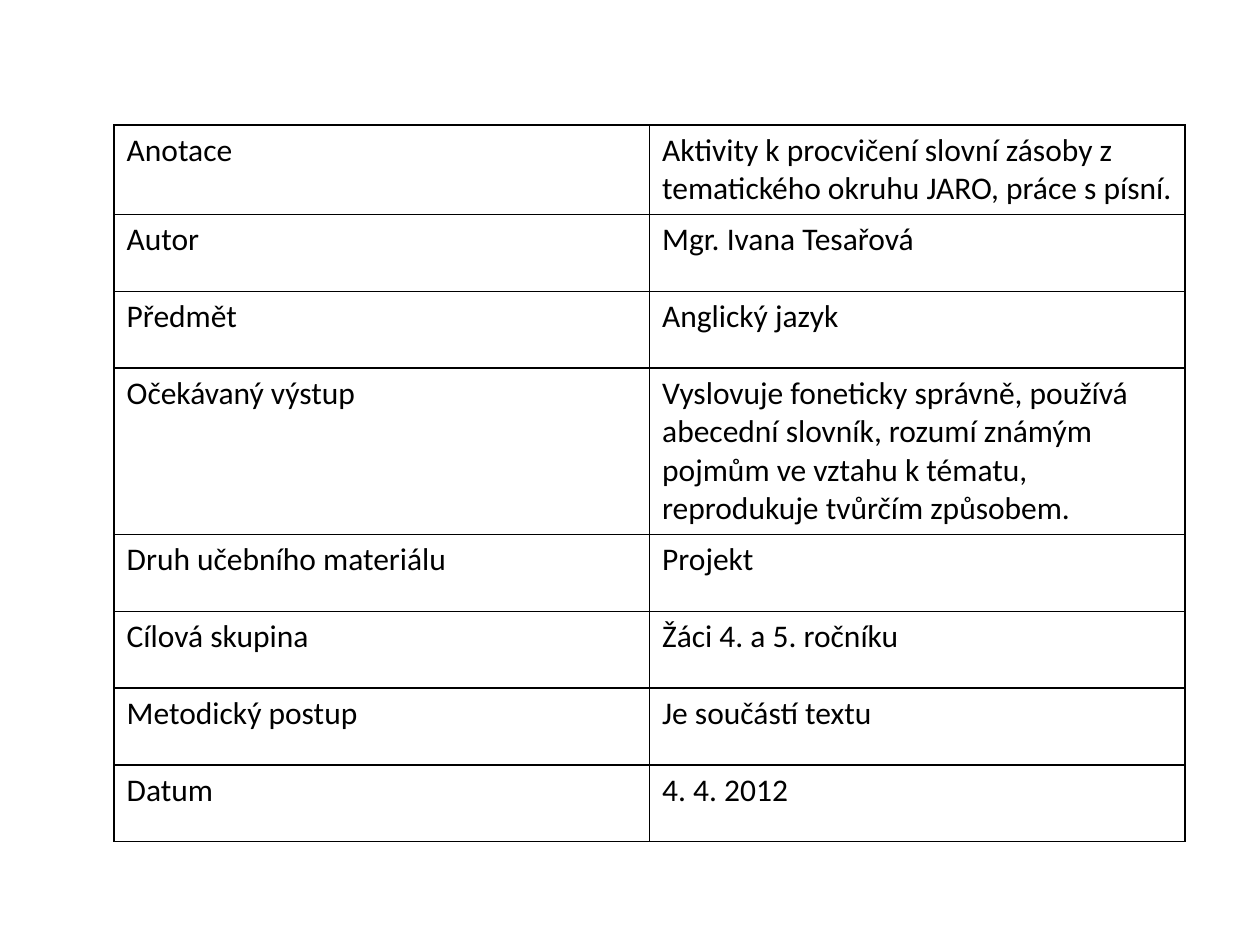
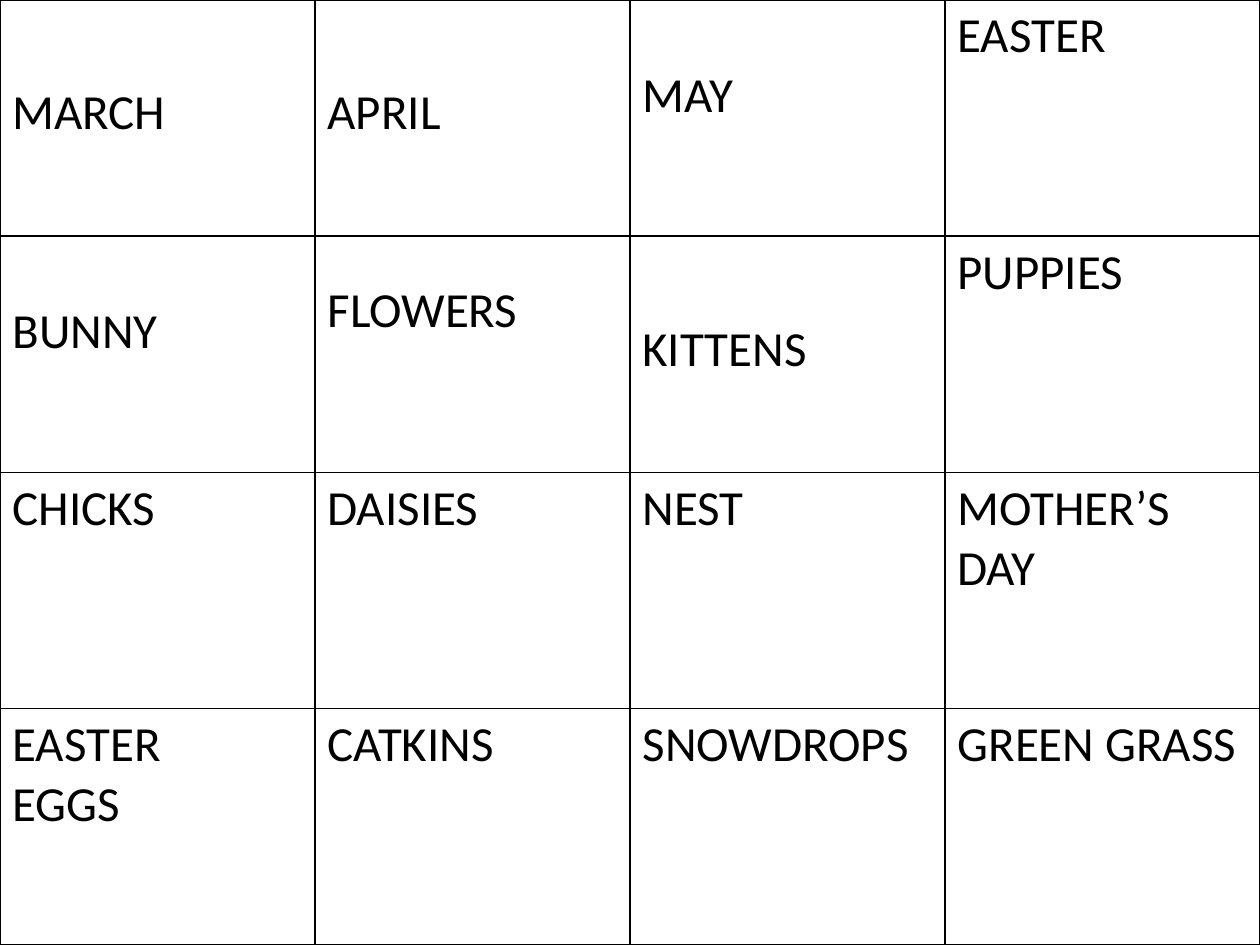
import lxml.etree
import pptx
import pptx.dml.color
import pptx.oxml.ns
import pptx.util

Pt = pptx.util.Pt
FONT = "Calibri"
COLORS = {"text": "000000", "border": "000000", "paper": "FFFFFF"}
BLANK_LAYOUT = 6
CELL_MARGIN = 3.6

LESSON_FACTS = [
    ("Anotace", "Aktivity k procvičení slovní zásoby z tematického okruhu JARO, práce s písní."),
    ("Autor", "Mgr. Ivana Tesařová"),
    ("Předmět", "Anglický jazyk"),
    ("Očekávaný výstup", "Vyslovuje foneticky správně, používá abecední slovník, rozumí známým "
                         "pojmům ve vztahu k tématu, reprodukuje tvůrčím způsobem."),
    ("Druh učebního materiálu", "Projekt"),
    ("Cílová skupina", "Žáci 4. a 5. ročníku"),
    ("Metodický postup", "Je součástí textu"),
    ("Datum", "4. 4. 2012"),
]
FACT_HEIGHTS = [51.1, 43.9, 43.9, 95, 43.9, 43.9, 43.9, 43.9]

SPRING_WORDS = [
    ("MARCH", "APRIL", "MAY", "EASTER"),
    ("BUNNY", "FLOWERS", "KITTENS", "PUPPIES"),
    ("CHICKS", "DAISIES", "NEST", "MOTHER’S\nDAY"),
    ("EASTER\nEGGS", "CATKINS", "SNOWDROPS", "GREEN GRASS"),
]
# Extra space above the words that sit lower in their cards
WORD_DROPS = {"MARCH": 44, "APRIL": 44, "MAY": 34.2, "BUNNY": 34.2, "FLOWERS": 22, "KITTENS": 44}


def rgb(name):
    return pptx.dml.color.RGBColor.from_string(COLORS[name])


def add_borders(cell, width=1):
    """Draw all four sides; the lines must precede the fill in the cell XML."""
    properties = cell._tc.get_or_add_tcPr()
    for index, side in enumerate(("lnL", "lnR", "lnT", "lnB")):
        line = lxml.etree.Element(pptx.oxml.ns.qn(f"a:{side}"), w=str(Pt(width)))
        fill = lxml.etree.SubElement(line, pptx.oxml.ns.qn("a:solidFill"))
        lxml.etree.SubElement(fill, pptx.oxml.ns.qn("a:srgbClr"), val=COLORS["border"])
        properties.insert(index, line)


def format_cell(cell, text, size, drop):
    cell.text_frame.text = text
    cell.margin_top = Pt(CELL_MARGIN + drop)
    cell.fill.solid()
    cell.fill.fore_color.rgb = rgb("paper")
    add_borders(cell)
    for para in cell.text_frame.paragraphs:
        for span in para.runs:
            span.font.name = FONT
            span.font.size = Pt(size)
            span.font.bold = False
            span.font.color.rgb = rgb("text")


def add_grid(page, box, rows, heights, size, drops):
    """Place a ruled table with equal columns in box (left, top, width)."""
    left, top, width = box
    columns = len(rows[0])
    table = page.shapes.add_table(len(rows), columns, Pt(left), Pt(top),
                                  Pt(width), Pt(sum(heights))).table
    table.first_row = table.horz_banding = False
    for column in table.columns:
        column.width = Pt(width / columns)
    for table_row, height, texts in zip(table.rows, heights, rows):
        table_row.height = Pt(height)
        for cell, text in zip(table_row.cells, texts):
            format_cell(cell, text, size, drops.get(text, 0))


def add_page(deck):
    return deck.slides.add_slide(deck.slide_layouts[BLANK_LAYOUT])


def add_facts_page(deck):
    add_grid(add_page(deck), (65.2, 71.4, 612), LESSON_FACTS, FACT_HEIGHTS, 18, {})


def add_word_cards_page(deck):
    add_grid(add_page(deck), (0, 0, 720), SPRING_WORDS, [135] * 4, 28, WORD_DROPS)


def main():
    deck = pptx.Presentation()
    deck.slide_width, deck.slide_height = Pt(720), Pt(540)
    add_facts_page(deck)
    add_word_cards_page(deck)
    deck.save("out.pptx")


if __name__ == "__main__":
    main()
